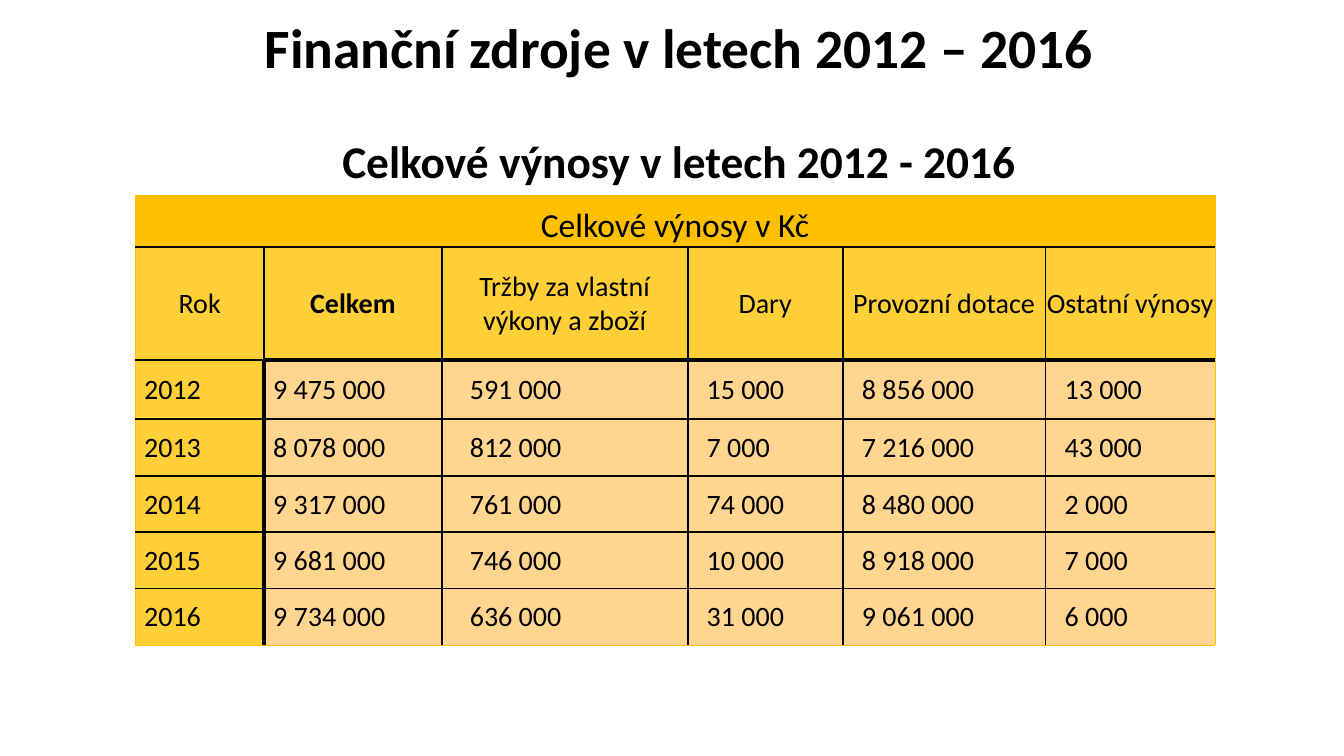
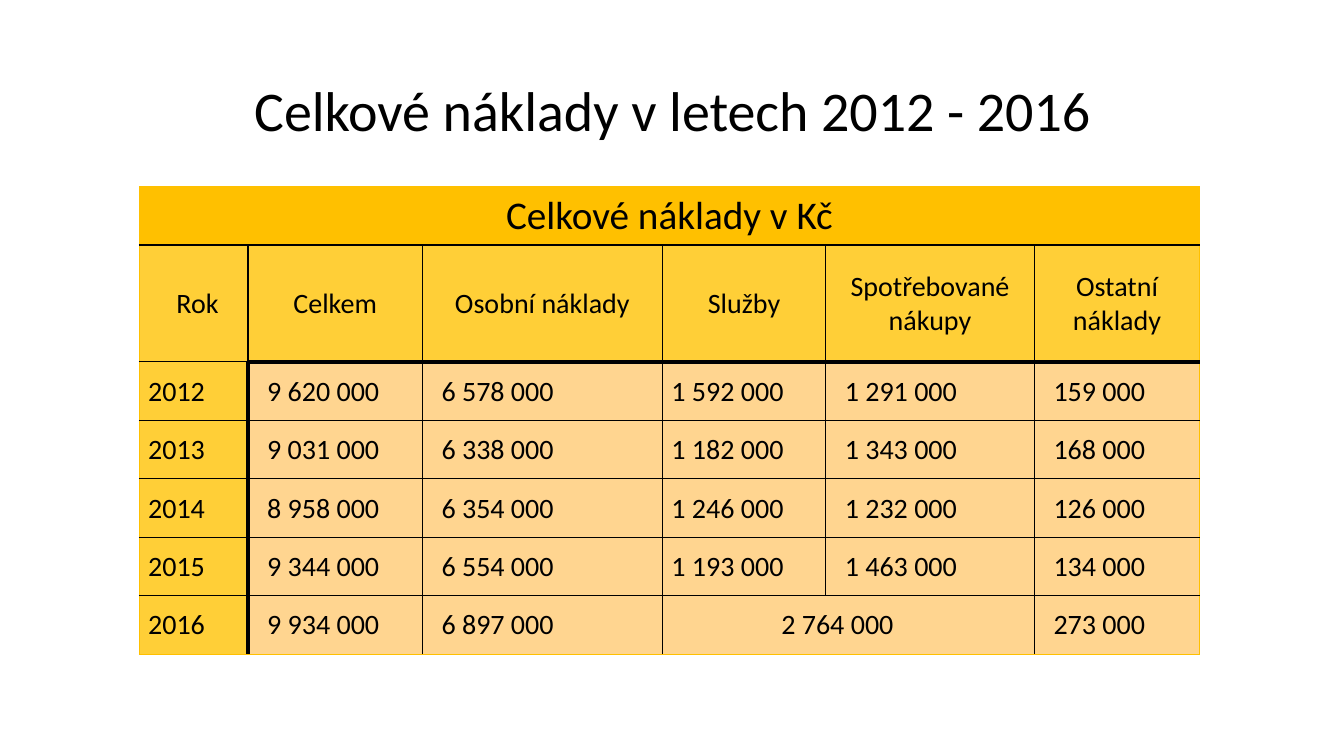
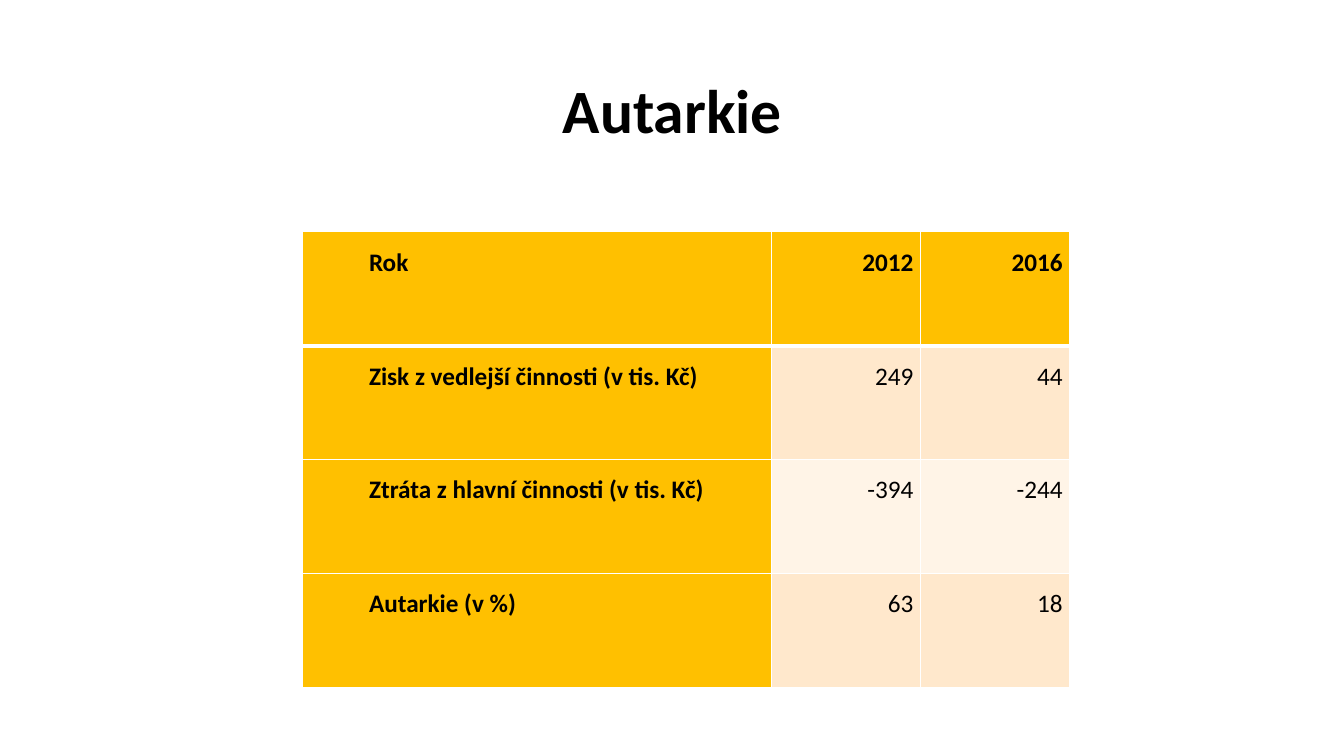
"""Builds three slides of yearly income, costs and autarky tables."""
from pptx import Presentation
from pptx.dml.color import RGBColor
from pptx.enum.text import MSO_ANCHOR as Anchor, MSO_AUTO_SIZE as AutoSize, PP_ALIGN as Align
from pptx.oxml.ns import qn
from pptx.util import Inches, Pt
from lxml.etree import SubElement

COLORS = {"ink": "000000", "gold": "FFC000", "amber": "FFCF37", "peach": "FFD590",
          "sand": "FFE8CC", "cream": "FFF4E7", "white": "FFFFFF"}
FONT = "Calibri"
YEARS = range(2012, 2017)
EDGE = ("gold", 0.5)

deck = Presentation()
deck.slide_width, deck.slide_height = Inches(13.33), Inches(7.5)


def add_page(title_lines, title_box, table_corner, columns, rows):
    """Add a slide with a title of (text, size, bold) lines and an empty table."""
    slide = deck.slides.add_slide(deck.slide_layouts[5])
    title = slide.shapes.title
    title.left, title.top, title.width, title.height = map(Inches, title_box)
    frame = title.text_frame
    frame.text = "\n".join(text for text, _, _ in title_lines)
    frame.auto_size, frame.vertical_anchor = AutoSize.NONE, Anchor.MIDDLE
    for line, (_, size, bold) in zip(frame.paragraphs, title_lines):
        line.alignment, line.line_spacing = Align.CENTER, 0.9
        line.font.name, line.font.size, line.font.bold = FONT, Pt(size), bold
        line.font.color.rgb = RGBColor.from_string(COLORS["ink"])
    table = slide.shapes.add_table(len(rows), len(columns), *map(Inches, table_corner),
                                   Inches(sum(columns)), Inches(sum(rows))).table
    table.first_row = table.horz_banding = False
    for column, width in zip(table.columns, columns):
        column.width = Inches(width)
    for row, height in zip(table.rows, rows):
        row.height = Inches(height)
    return frame, table


def set_cell(cell, text, size, fill, borders, insets, align=Align.LEFT,
             bold=False, anchor=Anchor.MIDDLE):
    """Write and style a cell; borders are (color, width) for left, right, top, bottom."""
    cell.text = text
    cell.margin_left, cell.margin_top, cell.margin_right, cell.margin_bottom = map(Inches, insets)
    cell.vertical_anchor = anchor
    line = cell.text_frame.paragraphs[0]
    line.alignment = align
    line.font.name, line.font.size, line.font.bold = FONT, Pt(size), bold
    line.font.color.rgb = RGBColor.from_string(COLORS["ink"])
    properties = cell._tc.get_or_add_tcPr()
    for side, (color, width) in zip("LRTB", borders):
        edge = SubElement(properties, qn(f"a:ln{side}"), w=str(Pt(width)))
        SubElement(SubElement(edge, qn("a:solidFill")), qn("a:srgbClr"), val=COLORS[color])
    cell.fill.solid()
    cell.fill.fore_color.rgb = RGBColor.from_string(COLORS[fill])
    return line


ledgers = [
    dict(title=[("Finanční zdroje v letech 2012 – 2016", 39.6, True),
                ("Celkové výnosy v letech 2012 - 2016", 32.4, True)],
         title_box=(1.13, 0.63, 11.21, 1.47), corner=(1.34, 1.94),
         columns=[1.28, 1.76, 2.44, 1.54, 2.01, 1.68],
         rows=[0.51, 1.12, 0.59] + [0.56] * 4,
         caption="Celkové výnosy v Kč", caption_size=24, caption_anchor=Anchor.BOTTOM,
         heads=["Rok", "Celkem", "Tržby za vlastní výkony a zboží", "Dary",
                "Provozní dotace", "Ostatní výnosy"],
         bold_head="Celkem", line=1.5, year_head_inset=0.01,
         indents=[0.09, 0.09, 0.28, 0.19, 0.19, 0.19],
         thousands=[(9475, 591, 15, 8856, 13), (8078, 812, 7, 7216, 43),
                    (9317, 761, 74, 8480, 2), (9681, 746, 10, 8918, 7),
                    (9734, 636, 31, 9061, 6)]),
    dict(title=[("Celkové náklady v letech 2012 - 2016", 40, False)],
         title_box=(0.92, 0.4, 11.5, 1.45), corner=(1.38, 1.85),
         columns=[1.08, 1.73, 2.38, 1.62, 2.07, 1.64],
         rows=[0.58, 1.16] + [0.58] * 5,
         caption="Celkové náklady v Kč", caption_size=28, caption_anchor=Anchor.MIDDLE,
         heads=["Rok", "Celkem", "Osobní náklady", "Služby", "Spotřebované nákupy",
                "Ostatní náklady"],
         bold_head=None, line=1, year_head_inset=0.09,
         indents=[0.09, 0.19, 0.19, 0.09, 0.19, 0.19],
         thousands=[(9620, 6578, 1592, 1291, 159), (9031, 6338, 1182, 1343, 168),
                    (8958, 6354, 1246, 1232, 126), (9344, 6554, 1193, 1463, 134),
                    (9934, 6897, 2764, None, 273)]),
]

for ledger in ledgers:
    heading, table = add_page(ledger["title"], ledger["title_box"], ledger["corner"],
                              ledger["columns"], ledger["rows"])
    if len(ledger["title"]) > 1:
        heading.margin_bottom = Inches(0.7)
        heading.paragraphs[1].space_before = Pt(42)
    thin, thick = ("ink", ledger["line"]), ("ink", 3)
    last_column, last_row = len(ledger["columns"]) - 1, len(ledger["rows"]) - 1
    table.cell(0, 0).merge(table.cell(0, last_column))
    set_cell(table.cell(0, 0), ledger["caption"], ledger["caption_size"], "gold",
             (EDGE, EDGE, EDGE, thin), (0.01, 0.01, 0.01, 0), Align.CENTER,
             anchor=ledger["caption_anchor"])
    records = [ledger["heads"]]
    for year, amounts in zip(YEARS, ledger["thousands"]):
        records.append([str(year)] + [f"{amount:,} 000".replace(",", " ") if amount else ""
                                      for amount in amounts])
    for r, record in enumerate(records, 1):
        for c, text in enumerate(record):
            is_head, is_year = r == 1, c == 0
            cell = table.cell(r, c)
            indent = ledger["indents"][c]
            if is_head:
                indent = ledger["year_head_inset"] if is_year else 0.01
            elif c < last_column and not record[c + 1]:
                cell.merge(table.cell(r, c + 1))
                indent = 1.18
            left = EDGE if is_year else thick if c == 1 and not is_head else thin
            right = EDGE if c == last_column else thick if is_year and not is_head else thin
            top = thick if r == 2 and not is_year else thin
            bottom = EDGE if r == last_row else thick if is_head and not is_year else thin
            set_cell(cell, text, 20, "amber" if is_head or is_year else "peach",
                     (left, right, top, bottom), (indent, 0.01, 0.01, 0),
                     Align.CENTER if is_head else Align.LEFT,
                     is_head and text == ledger["bold_head"])

autarky = [("Rok", "2012", "2016"),
           ("Zisk z vedlejší činnosti (v tis. Kč)", "249", "44"),
           ("Ztráta z hlavní činnosti (v tis. Kč)", "-394", "-244"),
           ("Autarkie (v %)", "63", "18")]
_, table = add_page([("Autarkie", 44, True)], (0.92, 0.4, 11.5, 1.45), (3, 2.3),
                    [4.65, 1.48, 1.48], [1.13] * len(autarky))
thin, thick = ("white", 1), ("white", 3)
for r, record in enumerate(autarky):
    for c, text in enumerate(record):
        is_label = r == 0 or c == 0
        fill = "gold" if is_label else "sand" if r % 2 else "cream"
        borders = (thin, thin, thick if r == 1 else thin, thick if r == 0 else thin)
        line = set_cell(table.cell(r, c), text, 18, fill, borders, (0.07, 0, 0.07, 0),
                        Align.RIGHT if c else Align.LEFT, is_label, Anchor.TOP)
        line.line_spacing = 1.5
        line._p.get_or_add_pPr().set("indent", str(Inches(0.59)))

deck.save("out.pptx")
